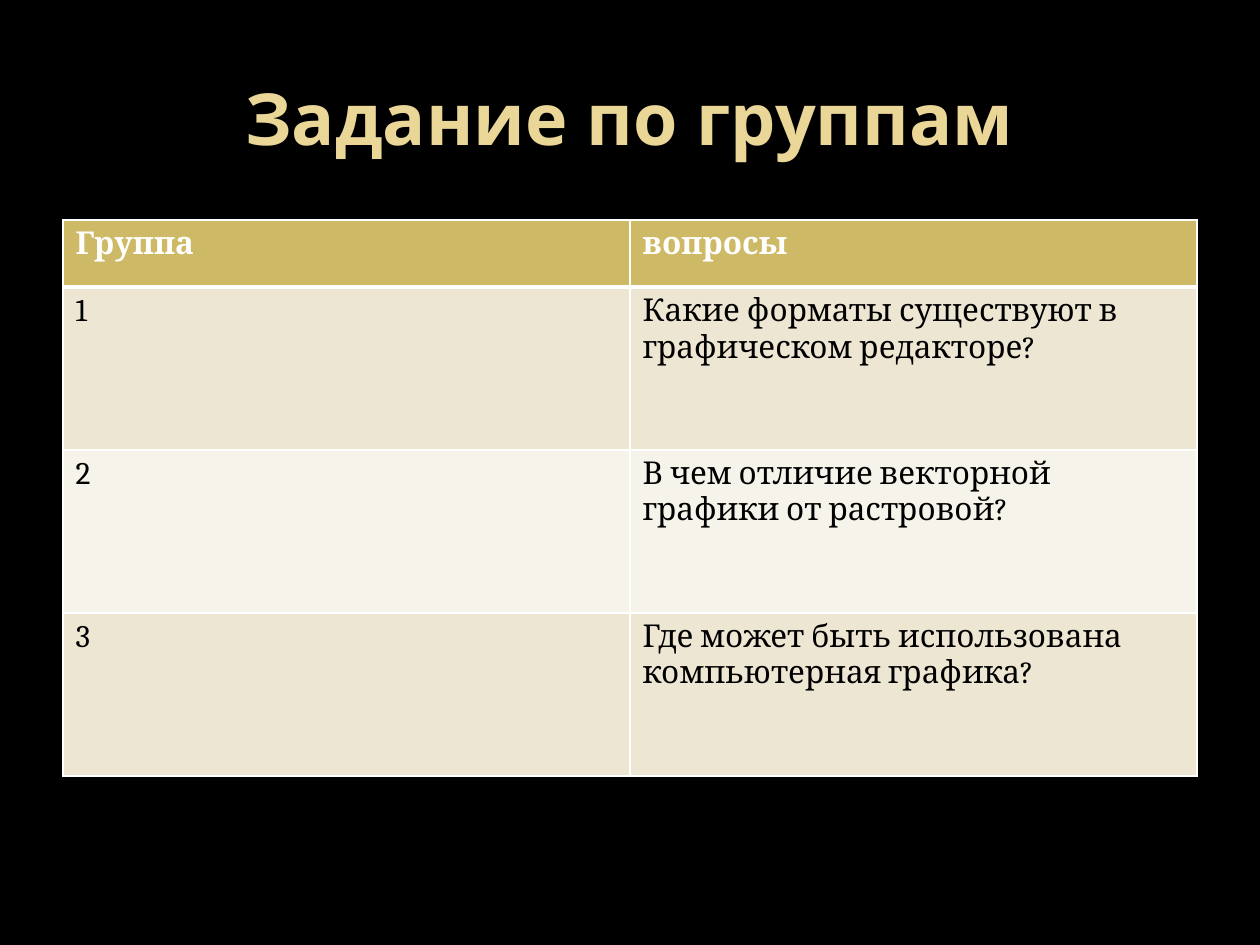
from dataclasses import dataclass

from lxml.etree import SubElement
from pptx import Presentation
from pptx.dml.color import RGBColor
from pptx.enum.text import MSO_ANCHOR as Anchor, PP_ALIGN as Align
from pptx.oxml.ns import qn
from pptx.util import Emu, Pt

PX = 914400 / 126
LEFT, WIDTH = 63, 1134
HEADER_HEIGHT, ROW_HEIGHT = 67, 163


@dataclass(frozen=True)
class Row:
    group: str
    question: str
    fill: str
    height: int = ROW_HEIGHT
    color: str = "000000"
    bold: bool = False
    bottom_border: int = 1


ROWS = [
    Row("Группа", "вопросы", "CEB966", HEADER_HEIGHT, "FFFFFF", True, 3),
    Row("1", "Какие форматы существуют в графическом редакторе?", "EDE6D3"),
    Row("2", "В чем отличие векторной графики от растровой?", "F6F3EA"),
    Row("3", "Где может быть использована компьютерная графика?", "EDE6D3"),
]


def px(length: int) -> Emu:
    return Emu(round(length * PX))


def rgb(value: str) -> RGBColor:
    return RGBColor.from_string(value)


def write(para, text: str, color: str, **font_format) -> None:
    span = para.add_run()
    span.text = text
    span.font.color.rgb = rgb(color)
    for name, value in font_format.items():
        setattr(span.font, name, value)


def add_border(cell, side: str, points: int) -> None:
    line = SubElement(cell._tc.get_or_add_tcPr(), qn(f"a:ln{side}"), w=str(Pt(points)))
    fill = SubElement(line, qn("a:solidFill"))
    SubElement(fill, qn("a:srgbClr"), val="FFFFFF")


def add_title(page, text: str) -> None:
    box = page.shapes.add_textbox(px(LEFT), px(38), px(WIDTH), px(158))
    frame = box.text_frame
    frame.word_wrap = True
    frame.vertical_anchor = Anchor.MIDDLE
    para = frame.paragraphs[0]
    para.alignment = Align.CENTER
    write(para, text, "EAD696", name="Open Sans", size=Pt(41), bold=True)


def add_question_table(page, rows: list[Row]) -> None:
    height = sum(row.height for row in rows)
    table = page.shapes.add_table(
        len(rows), 2, px(LEFT), px(220), px(WIDTH), px(height)
    ).table
    for index, row in enumerate(rows):
        table.rows[index].height = px(row.height)
        top_border = rows[index - 1].bottom_border if index else 1
        borders = {"L": 1, "R": 1, "T": top_border, "B": row.bottom_border}
        for column, text in enumerate((row.group, row.question)):
            cell = table.cell(index, column)
            for side, points in borders.items():
                add_border(cell, side, points)
            cell.fill.solid()
            cell.fill.fore_color.rgb = rgb(row.fill)
            write(cell.text_frame.paragraphs[0], text, row.color,
                  name="Cambria", size=Pt(18), bold=row.bold)


def main() -> None:
    deck = Presentation()
    deck.slide_width, deck.slide_height = px(1260), px(945)
    page = deck.slides.add_slide(deck.slide_layouts[6])
    page.background.fill.solid()
    page.background.fill.fore_color.rgb = rgb("000000")
    add_title(page, "Задание по группам")
    add_question_table(page, ROWS)
    deck.save("out.pptx")


if __name__ == "__main__":
    main()
